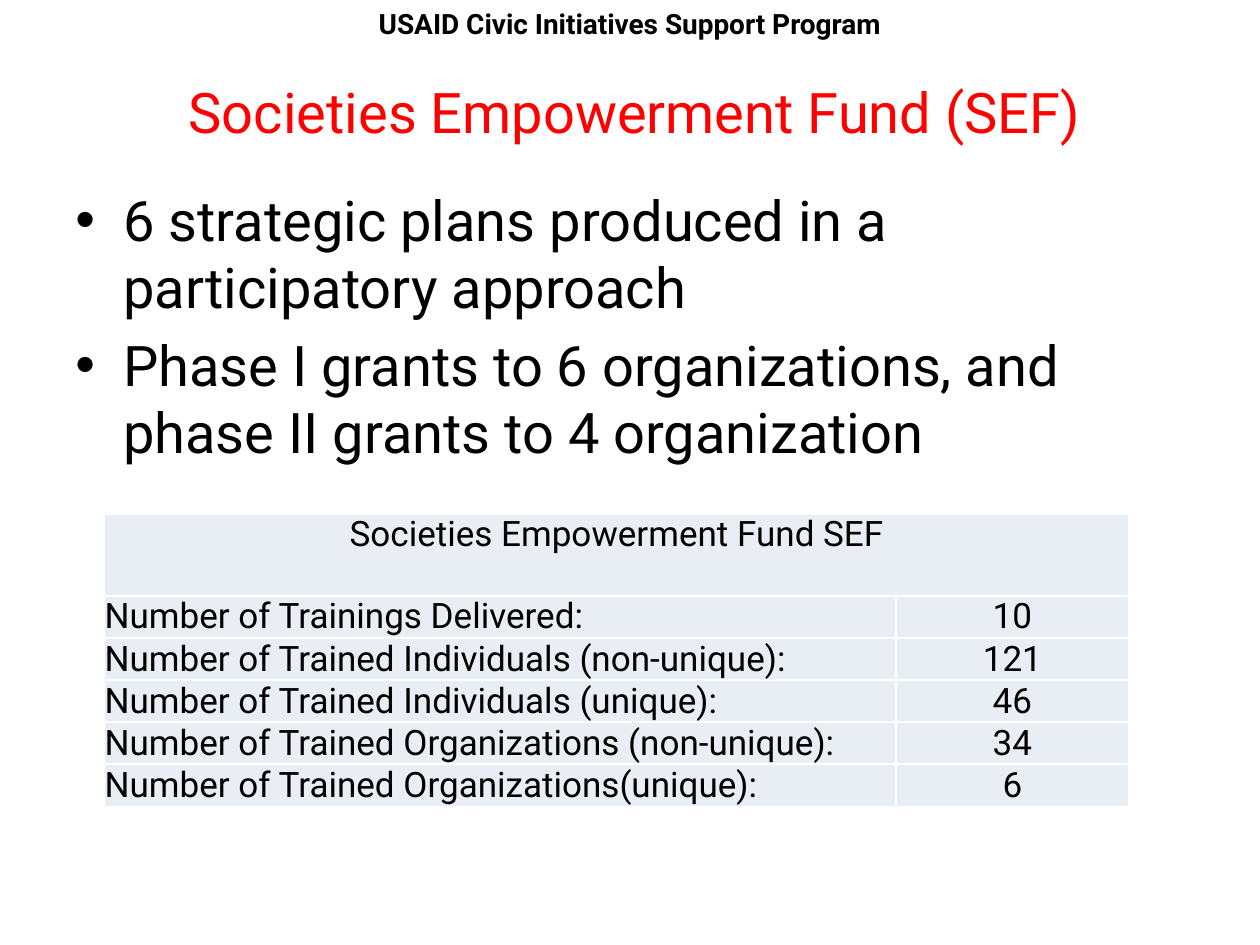
from lxml.etree import SubElement
from pptx import Presentation
from pptx.dml.color import RGBColor
from pptx.enum.text import MSO_ANCHOR as Anchor, PP_ALIGN as Align
from pptx.oxml.ns import qn
from pptx.util import Inches, Pt

FONT = "Roboto"
COLORS = {"text": "000000", "title": "FF0000", "cell": "E9EDF4", "border": "FFFFFF"}
PLANS = [
    "6 strategic plans produced in a participatory approach",
    "Phase I grants to 6 organizations, and phase II grants to 4 organization",
]
RESULTS = [
    ("Number of Trainings Delivered:", "10"),
    ("Number of Trained Individuals (non-unique):", "121"),
    ("Number of Trained Individuals (unique):", "46"),
    ("Number of Trained Organizations (non-unique):", "34"),
    ("Number of Trained Organizations(unique):", "6"),
]


def add_run(paragraph, text, size, color="text", bold=False):
    run = paragraph.add_run()
    run.text = text
    run.font.name = FONT
    run.font.size = Pt(size)
    run.font.bold = bold
    run.font.color.rgb = RGBColor.from_string(COLORS[color])


def add_text_frame(slide, left, top, width, height):
    frame = slide.shapes.add_textbox(
        Inches(left), Inches(top), Inches(width), Inches(height)
    ).text_frame
    frame.word_wrap = True
    return frame


def add_program_name(slide):
    paragraph = add_text_frame(slide, 2.5, 0, 5, 0.67).paragraphs[0]
    paragraph.alignment = Align.CENTER
    add_run(paragraph, "USAID Civic Initiatives Support Program", 16, bold=True)


def set_title(slide, text):
    title = slide.shapes.title
    title.left, title.top = Inches(0.5), Inches(0.44)
    title.width, title.height = Inches(9.08), Inches(0.89)
    title.text_frame.vertical_anchor = Anchor.MIDDLE
    paragraph = title.text_frame.paragraphs[0]
    paragraph.alignment = Align.CENTER
    add_run(paragraph, text, 32, "title")


def add_bullets(slide, items):
    frame = add_text_frame(slide, 0.5, 1.42, 9, 5.92)
    for index, item in enumerate(items):
        paragraph = frame.add_paragraph() if index else frame.paragraphs[0]
        properties = paragraph._p.get_or_add_pPr()
        properties.set("marL", str(Inches(0.38)))
        properties.set("indent", str(-Inches(0.38)))
        SubElement(properties, qn("a:buFont"), typeface="Arial")
        SubElement(properties, qn("a:buChar"), char="•")
        paragraph.space_before = Pt(6.4 if index else 0)
        add_run(paragraph, item, 32)


def add_borders(cell):
    properties = cell._tc.get_or_add_tcPr()
    for side in ("lnL", "lnR", "lnT", "lnB"):
        line = SubElement(properties, qn(f"a:{side}"), w=str(Pt(1)))
        fill = SubElement(line, qn("a:solidFill"))
        SubElement(fill, qn("a:srgbClr"), val=COLORS["border"])


def format_cell(cell):
    cell.margin_left = cell.margin_right = 0
    cell.margin_top = cell.margin_bottom = 0
    cell.vertical_anchor = Anchor.MIDDLE
    add_borders(cell)
    cell.fill.solid()
    cell.fill.fore_color.rgb = RGBColor.from_string(COLORS["cell"])


def write_cell(cell, text, alignment):
    paragraph = cell.text_frame.paragraphs[0]
    paragraph.alignment = alignment
    add_run(paragraph, text, 20)


def add_results_table(slide, heading, results):
    table = slide.shapes.add_table(
        len(results) + 1, 2, Inches(0.83), Inches(4.08), Inches(8.13), Inches(2.3)
    ).table
    table.columns[0].width = Inches(6.28)
    table.columns[1].width = Inches(1.85)
    for row in table.rows:
        row.height = Inches(0.33)
    table.rows[0].height = Inches(0.65)
    for cell in table.iter_cells():
        format_cell(cell)

    heading_cell = table.cell(0, 0)
    heading_cell.merge(table.cell(0, 1))
    heading_cell.vertical_anchor = Anchor.TOP
    write_cell(heading_cell, heading, Align.CENTER)
    for row, (measure, count) in enumerate(results, start=1):
        write_cell(table.cell(row, 0), measure, Align.LEFT)
        write_cell(table.cell(row, 1), count, Align.CENTER)


def main():
    presentation = Presentation()
    presentation.slide_width = Inches(10)
    presentation.slide_height = Inches(7.5)
    slide = presentation.slides.add_slide(presentation.slide_layouts[5])
    add_program_name(slide)
    set_title(slide, "Societies Empowerment Fund (SEF)")
    add_bullets(slide, PLANS)
    add_results_table(slide, "Societies Empowerment Fund SEF", RESULTS)
    presentation.save("out.pptx")


if __name__ == "__main__":
    main()
